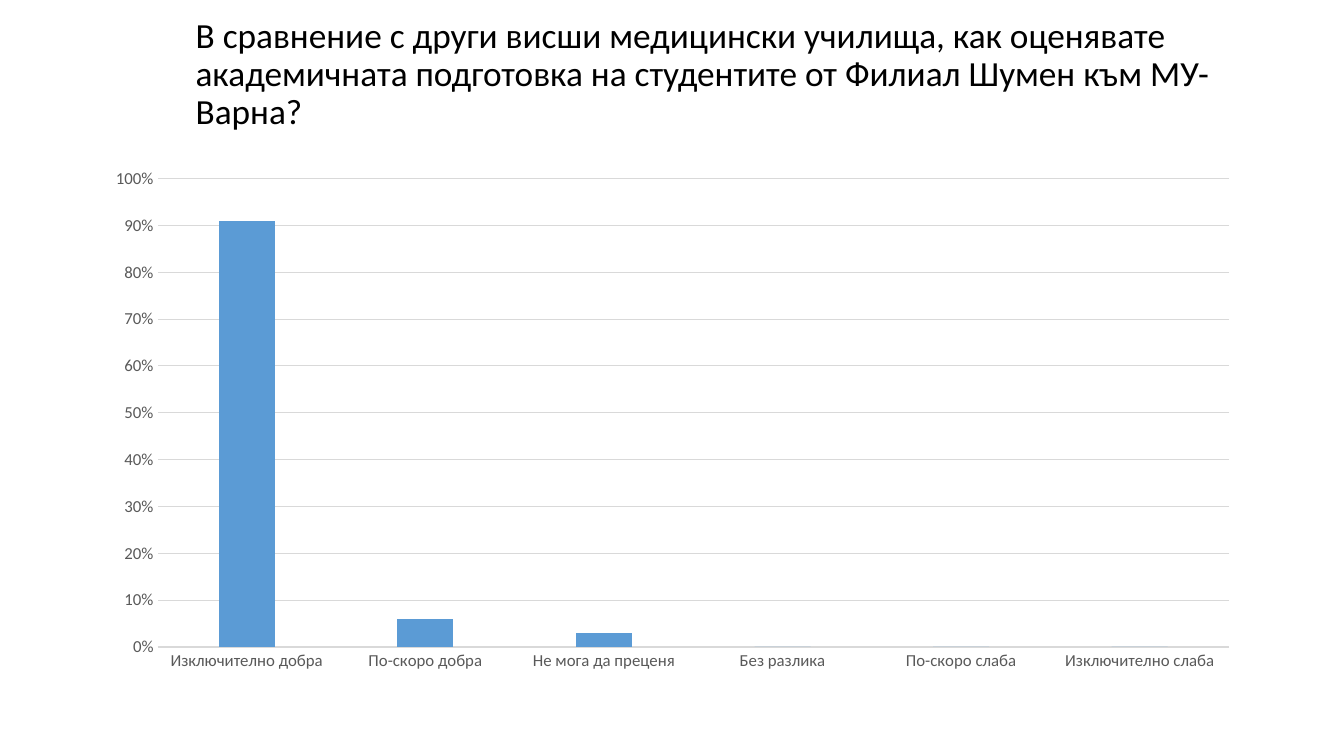
"""Build a slide with a survey question and a column chart of its answers."""
from typing import Any, NamedTuple

from pptx import Presentation
from pptx.chart.data import CategoryChartData
from pptx.dml.color import RGBColor
from pptx.enum.chart import XL_CHART_TYPE, XL_TICK_MARK
from pptx.enum.text import MSO_ANCHOR, MSO_AUTO_SIZE, PP_ALIGN
from pptx.util import Inches, Pt

HUES = {"text": "000000", "label": "595959", "grid": "D9D9D9", "bar": "5B9BD5"}
FACE = "Calibri"


class Box(NamedTuple):
    left: float
    top: float
    width: float
    height: float


class Answer(NamedTuple):
    label: str
    share: float


QUERY = ("В сравнение с други висши медицински училища, как оценявате "
         "академичната подготовка на студентите от Филиал Шумен към МУ-Варна?")
ANSWERS = [
    Answer("Изключително добра", 0.91),
    Answer("По-скоро добра", 0.06),
    Answer("Не мога да преценя", 0.03),
    Answer("Без разлика", 0),
    Answer("По-скоро слаба", 0),
    Answer("Изключително слаба", 0),
]
HEAD = Box(1.84, 0.15, 10.58, 1.19)
PLOT = Box(0.92, 1.57, 11.5, 5.19)


def apply(item: Any, form: dict[str, Any]) -> None:
    for name, value in form.items():
        setattr(item, name, value)


def place(box: Box) -> dict[str, int]:
    return {name: Inches(value) for name, value in box._asdict().items()}


def hue(name: str) -> RGBColor:
    return RGBColor.from_string(HUES[name])


def style(font: Any, size: float, name: str) -> None:
    apply(font, {"name": FACE, "size": Pt(size), "bold": False})
    font.color.rgb = hue(name)


def rule(line: Any) -> None:
    line.width = Pt(0.75)
    line.color.rgb = hue("grid")


def draw_title(slide: Any) -> None:
    title = slide.shapes.title
    apply(title, place(HEAD))
    frame = title.text_frame
    frame.text = QUERY
    apply(frame, {"word_wrap": True, "auto_size": MSO_AUTO_SIZE.NONE,
                  "vertical_anchor": MSO_ANCHOR.MIDDLE})
    para = frame.paragraphs[0]
    apply(para, {"alignment": PP_ALIGN.LEFT, "line_spacing": 0.9,
                 "space_before": Pt(0)})
    style(para.runs[0].font, 25.2, "text")


def draw_chart(slide: Any) -> None:
    data = CategoryChartData(number_format="0%")
    data.categories = [answer.label for answer in ANSWERS]
    data.add_series("Series 1", [answer.share for answer in ANSWERS])
    chart = slide.shapes.add_chart(
        XL_CHART_TYPE.COLUMN_CLUSTERED, *place(PLOT).values(), data).chart
    apply(chart, {"has_legend": False, "has_title": False})
    style(chart.font, 10, "text")

    plot = chart.plots[0]
    apply(plot, {"gap_width": 219, "overlap": -27, "vary_by_categories": False})
    fill = plot.series[0].format.fill
    fill.solid()
    fill.fore_color.rgb = hue("bar")

    for axis in (chart.category_axis, chart.value_axis):
        apply(axis, {"major_tick_mark": XL_TICK_MARK.NONE,
                     "minor_tick_mark": XL_TICK_MARK.NONE})
        style(axis.tick_labels.font, 12, "label")
    rule(chart.category_axis.format.line)
    scale = chart.value_axis
    apply(scale, {"minimum_scale": 0, "maximum_scale": 1, "major_unit": 0.1,
                  "has_major_gridlines": True})
    apply(scale.tick_labels, {"number_format": "0%",
                              "number_format_is_linked": False})
    scale.format.line.fill.background()
    rule(scale.major_gridlines.format.line)


def main() -> None:
    deck = Presentation()
    apply(deck, {"slide_width": Inches(13.33), "slide_height": Inches(7.5)})
    slide = deck.slides.add_slide(deck.slide_layouts.get_by_name("Title Only"))
    draw_title(slide)
    draw_chart(slide)
    deck.save("out.pptx")


if __name__ == "__main__":
    main()
